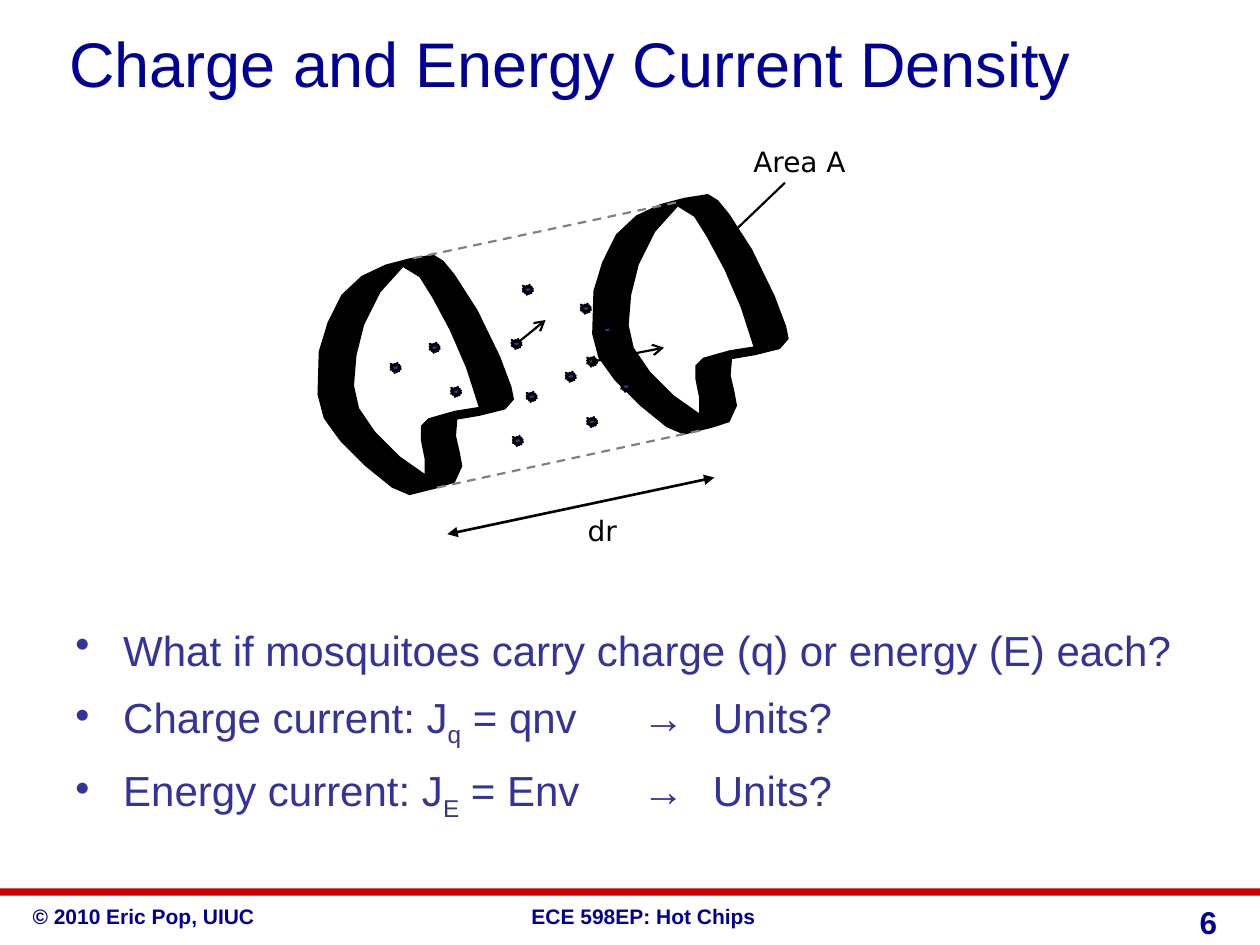
from lxml import etree
from pptx import Presentation
from pptx.dml.color import RGBColor
from pptx.enum.dml import MSO_LINE
from pptx.enum.shapes import MSO_CONNECTOR, MSO_SHAPE
from pptx.enum.text import MSO_ANCHOR, PP_ALIGN
from pptx.oxml.ns import qn
from pptx.util import Inches, Pt

STRAIGHT = MSO_CONNECTOR.STRAIGHT
DASH = MSO_LINE.DASH
RECTANGLE, BURST = MSO_SHAPE.RECTANGLE, MSO_SHAPE.EXPLOSION1
TOP, MIDDLE = MSO_ANCHOR.TOP, MSO_ANCHOR.MIDDLE
LEFT, CENTER, RIGHT = PP_ALIGN.LEFT, PP_ALIGN.CENTER, PP_ALIGN.RIGHT

NAVY = RGBColor(0x00, 0x00, 0x99)
INDIGO = RGBColor(0x33, 0x33, 0x99)
RED = RGBColor(0xCC, 0x00, 0x00)
GRAY = RGBColor(0x80, 0x80, 0x80)
BLACK = RGBColor(0x00, 0x00, 0x00)

TITLE_FONT = {"name": "Arial", "size": Pt(36), "color": NAVY}
BODY_FONT = {"name": "Arial", "size": Pt(24), "color": INDIGO}
FOOTER_FONT = {"name": "Arial", "size": Pt(12), "color": NAVY, "bold": True}
NUMBER_FONT = {**FOOTER_FONT, "size": Pt(18)}
LABEL_FONT = {"name": "DejaVu Sans", "size": Pt(16), "color": BLACK}

# Ring contours, in hundredths of an inch
RING_OUTER = [
    (306, 210), (287, 219), (271, 234), (260, 256), (253, 279), (252, 313),
    (257, 332), (270, 350), (290, 370), (311, 387), (325, 393), (349, 387),
    (361, 383), (367, 370), (365, 359), (362, 346), (363, 333), (381, 330),
    (401, 325), (408, 317), (406, 307), (397, 283), (379, 246), (361, 218),
    (352, 207), (344, 202), (325, 205)]
RING_INNER = [
    (320, 212), (333, 220), (343, 236), (357, 262), (370, 292), (380, 323),
    (361, 326), (340, 332), (334, 338), (334, 349), (337, 364), (337, 376),
    (317, 362), (298, 343), (285, 324), (281, 306), (283, 282), (289, 258),
    (302, 232)]
RING_OFFSETS = [(2.18, -0.48), (0, 0)]

MOSQUITOES = [
    (4.15, 2.26), (4.06, 2.69), (4.18, 3.11), (4.49, 2.95), (4.66, 2.83),
    (4.61, 2.41), (4.66, 3.31), (4.93, 3.03), (4.78, 2.58), (3.10, 2.88),
    (3.41, 2.72), (3.58, 3.07), (4.07, 3.46)]
MOSQUITO_SIZE = 0.08

# Each bullet is a list of (text, is subscript)
BULLETS = [
    [("What if mosquitoes carry charge (q) or energy (E) each?", False)],
    [("Charge current: J", False), ("q", True), (" = qnv\t→\tUnits?", False)],
    [("Energy current: J", False), ("E", True), (" = Env\t→\tUnits?", False)],
]
TAB_STOPS = [4.5, 5.06]


class SlideBuilder:
    def __init__(self, slide):
        self.slide = slide
        self.shapes = slide.shapes

    def style_run(self, run, style):
        for key, value in style.items():
            if key == "color":
                run.font.color.rgb = value
            else:
                setattr(run.font, key, value)

    def place(self, shape, box):
        for side, value in zip(("left", "top", "width", "height"), box):
            setattr(shape, side, Inches(value))

    def title(self, text, box):
        title = self.shapes.title
        self.place(title, box)
        self.fill_text(title.text_frame, text, TITLE_FONT, LEFT, MIDDLE, True)

    def fill_text(self, frame, text, style, align, anchor, wrap):
        frame.word_wrap = wrap
        frame.vertical_anchor = anchor
        paragraph = frame.paragraphs[0]
        paragraph.alignment = align
        run = paragraph.add_run()
        run.text = text
        self.style_run(run, style)

    def text(self, text, box, style, align=LEFT, margin=None):
        frame = self.shapes.add_textbox(*map(Inches, box)).text_frame
        if margin is not None:
            for side in ("left", "top", "right", "bottom"):
                setattr(frame, f"margin_{side}", Inches(margin))
        self.fill_text(frame, text, style, align, TOP, align == RIGHT)

    def bullets(self, items, box):
        frame = self.shapes.add_textbox(*map(Inches, box)).text_frame
        frame.word_wrap = True
        for index, parts in enumerate(items):
            paragraph = frame.add_paragraph() if index else frame.paragraphs[0]
            paragraph.line_spacing = 1.1
            paragraph.space_before = Pt(6)
            props = paragraph._p.get_or_add_pPr()
            props.set("marL", str(Inches(0.38)))
            props.set("indent", str(-Inches(0.38)))
            etree.SubElement(props, qn("a:buChar"), char="•")
            tabs = etree.SubElement(props, qn("a:tabLst"))
            for stop in TAB_STOPS:
                etree.SubElement(tabs, qn("a:tab"), pos=str(Inches(stop)), algn="l")
            for text, is_subscript in parts:
                run = paragraph.add_run()
                run.text = text
                self.style_run(run, BODY_FONT)
                if is_subscript:
                    run._r.get_or_add_rPr().set("baseline", "-25000")

    def shape(self, kind, box, fill, outline=None):
        shape = self.shapes.add_shape(kind, *map(Inches, box))
        self.paint(shape, fill, outline)

    def paint(self, shape, fill, outline):
        shape.shadow.inherit = False
        shape.fill.solid()
        shape.fill.fore_color.rgb = fill
        if outline is None:
            shape.line.fill.background()
        else:
            shape.line.color.rgb = outline
            shape.line.width = Pt(1.25)

    def ring(self, offset):
        builder = self.shapes.build_freeform(*RING_OUTER[0], scale=Inches(0.01))
        builder.add_line_segments(RING_OUTER[1:], close=True)
        builder.move_to(*RING_INNER[0])
        builder.add_line_segments(RING_INNER[1:], close=True)
        self.paint(builder.convert_to_shape(*map(Inches, offset)), BLACK, None)

    def line(self, start, end, color=BLACK, width=1.25, dash=None, head=None, tail=None):
        line = self.shapes.add_connector(STRAIGHT, *map(Inches, start + end))
        line.line.color.rgb = color
        line.line.width = Pt(width)
        if dash is not None:
            line.line.dash_style = dash
        for tag, arrow in (("a:headEnd", head), ("a:tailEnd", tail)):
            if arrow:
                etree.SubElement(line.line._get_or_add_ln(), qn(tag), type=arrow)
        etree.SubElement(line._element.spPr, qn("a:effectLst"))


def main():
    deck = Presentation()
    deck.slide_width, deck.slide_height = Inches(10), Inches(7.5)
    title_only = deck.slide_layouts[5]
    page = SlideBuilder(deck.slides.add_slide(title_only))

    # Footer
    page.shape(RECTANGLE, (0, 7.05, 10, 0.06), RED)
    page.text("© 2010 Eric Pop, UIUC", (0.16, 7.12, 1.98, 0.3), FOOTER_FONT)
    page.text("ECE 598EP: Hot Chips", (4.12, 7.12, 2, 0.3), FOOTER_FONT)
    page.text("6", (9.08, 7.17, 0.58, 0.2), NUMBER_FONT, RIGHT, margin=0)

    # Title and bullets
    page.title("Charge and Energy Current Density", (0.45, 0.14, 9, 0.71))
    page.bullets(BULLETS, (0.5, 4.87, 9, 1.87))

    # Rings and the mosquitoes moving through them
    for offset in RING_OFFSETS:
        page.ring(offset)
    for left, top in MOSQUITOES:
        page.shape(BURST, (left, top, MOSQUITO_SIZE, MOSQUITO_SIZE), INDIGO, BLACK)
    page.line((4.7, 2.87), (5.27, 2.76), tail="arrow")
    page.line((4.11, 2.72), (4.33, 2.54), tail="arrow")

    # Volume edges, area label and thickness
    page.line((3.28, 2.05), (5.4, 1.6), GRAY, dash=DASH)
    page.line((3.47, 3.87), (5.59, 3.41), GRAY, dash=DASH)
    page.line((5.76, 1.9), (6.23, 1.45))
    page.text("Area A", (5.87, 1.1, 0.95, 0.37), LABEL_FONT, CENTER)
    page.line((3.55, 4.24), (5.67, 3.79), width=1.5, head="triangle", tail="triangle")
    page.text("dr", (4.56, 4.03, 0.44, 0.37), LABEL_FONT, CENTER)

    deck.save("out.pptx")


if __name__ == "__main__":
    main()
